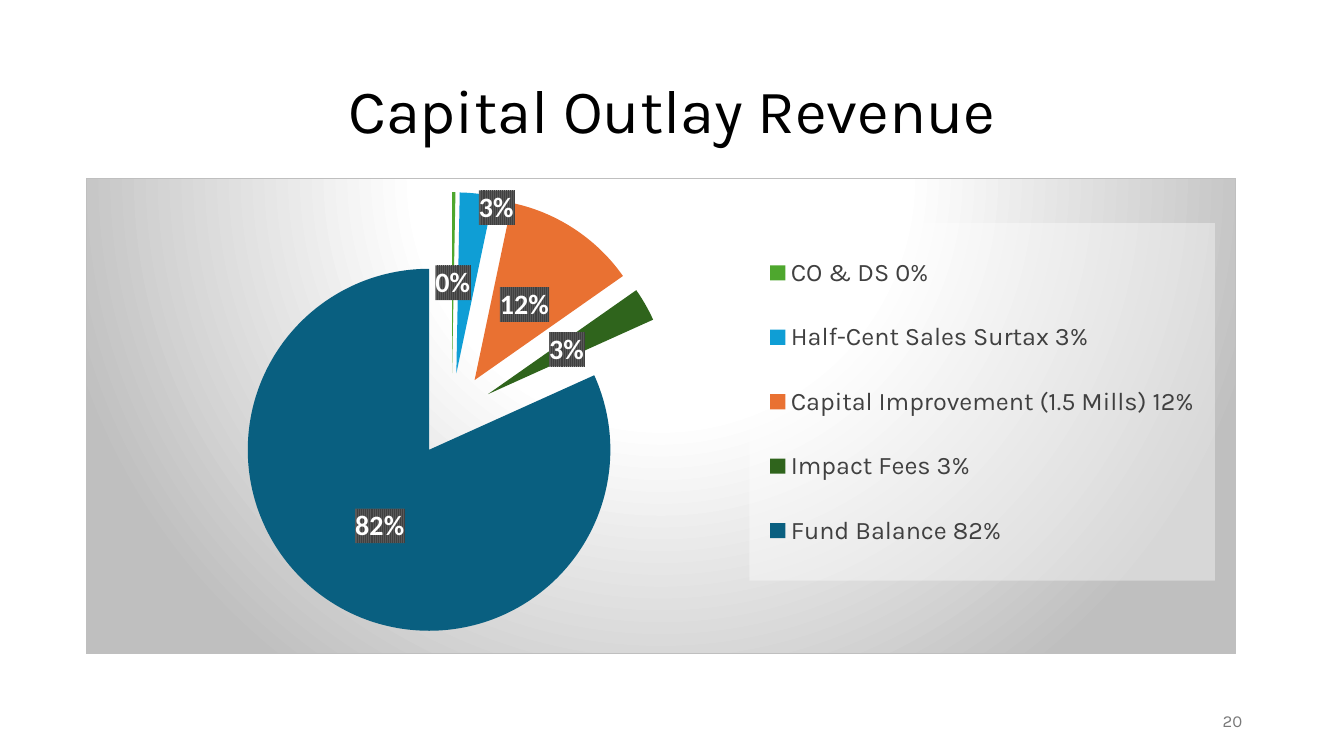
from copy import deepcopy

from pptx import Presentation
from pptx.chart.data import CategoryChartData
from pptx.dml.color import RGBColor
from pptx.enum.chart import XL_CHART_TYPE, XL_LABEL_POSITION, XL_LEGEND_POSITION
from pptx.enum.text import MSO_ANCHOR, PP_ALIGN
from pptx.oxml import parse_xml
from pptx.oxml.ns import qn
from pptx.util import Inches, Pt

BLACK = RGBColor(0x00, 0x00, 0x00)
WHITE = RGBColor(0xFF, 0xFF, 0xFF)
LEGEND_GREY = RGBColor(0x40, 0x40, 0x40)
NUMBER_GREY = RGBColor(0x79, 0x79, 0x79)
LABEL_STRIPE = RGBColor(0x59, 0x59, 0x59)
BACKDROP_GREY = RGBColor(0xBF, 0xBF, 0xBF)

REVENUE = [
    ("CO & DS 0%", 0.3, RGBColor(0x4E, 0xA7, 0x2E)),
    ("Half-Cent Sales Surtax 3%", 3, RGBColor(0x0F, 0x9E, 0xD5)),
    ("Capital Improvement (1.5 Mills) 12%", 12, RGBColor(0xE9, 0x71, 0x32)),
    ("Impact Fees 3%", 3, RGBColor(0x2F, 0x64, 0x1C)),
    ("Fund Balance 82%", 82, RGBColor(0x09, 0x5F, 0x80)),
]
EXPLOSION = 23
SURTAX_INDEX = 1
NAMESPACES = (
    'xmlns:c="http://schemas.openxmlformats.org/drawingml/2006/chart" '
    'xmlns:a="http://schemas.openxmlformats.org/drawingml/2006/main"'
)


def chart_xml(tag, content):
    return parse_xml(f"<c:{tag} {NAMESPACES}>{content}</c:{tag}>")


def manual_layout(x, y, w=None, h=None, inner=False, edge=True):
    parts = '<c:layoutTarget val="inner"/>' if inner else ""
    if edge:
        parts += '<c:xMode val="edge"/><c:yMode val="edge"/>'
    for name, value in (("x", x), ("y", y), ("w", w), ("h", h)):
        if value is not None:
            parts += f'<c:{name} val="{value}"/>'
    return chart_xml("layout", f"<c:manualLayout>{parts}</c:manualLayout>")


def replace_layout(parent, layout, position):
    for old in parent.findall(qn("c:layout")):
        parent.remove(old)
    parent.insert(position, layout)


def style_font(font, name, size, color, bold=False):
    font.name, font.size, font.bold = name, Pt(size), bold
    font.color.rgb = color


def add_text(slide, box, text, size, color, align, line_spacing=None):
    frame = slide.shapes.add_textbox(*map(Inches, box)).text_frame
    frame.word_wrap = True
    frame.vertical_anchor = MSO_ANCHOR.MIDDLE
    paragraph = frame.paragraphs[0]
    paragraph.alignment = align
    paragraph.line_spacing = line_spacing
    run = paragraph.add_run()
    run.text = text
    style_font(run.font, "Karla", size, color)


def style_backdrop(chart):
    style_font(chart.font, "Karla", 10, BLACK)
    stops = "".join(
        f'<a:gs pos="{percent * 1000}"><a:srgbClr val="{color}"/></a:gs>'
        for percent, color in ((0, WHITE), (39, WHITE), (100, BACKDROP_GREY))
    )
    backdrop = chart_xml(
        "spPr",
        f'<a:gradFill><a:gsLst>{stops}</a:gsLst><a:path path="circle">'
        '<a:fillToRect l="50000" t="-80000" r="50000" b="180000"/></a:path></a:gradFill>'
        f'<a:ln w="9525"><a:solidFill><a:srgbClr val="{BACKDROP_GREY}"/></a:solidFill></a:ln>',
    )
    chart._chartSpace.find(qn("c:txPr")).addprevious(backdrop)


def style_legend(chart):
    chart.has_legend = True
    legend = chart.legend
    legend.position = XL_LEGEND_POSITION.RIGHT
    legend.include_in_layout = False
    style_font(legend.font, "Karla", 18, LEGEND_GREY)
    replace_layout(legend._element, manual_layout(0.577, 0.093, 0.405, 0.753), 1)
    panel = chart_xml(
        "spPr",
        f'<a:solidFill><a:srgbClr val="{WHITE}"><a:alpha val="39000"/></a:srgbClr></a:solidFill>',
    )
    legend._element.find(qn("c:txPr")).addprevious(panel)


def style_labels(series):
    labels = series.data_labels
    labels.show_value = False
    labels.show_percentage = True
    labels.number_format = "0%"
    labels.number_format_is_linked = False
    labels.position = XL_LABEL_POSITION.CENTER
    style_font(labels.font, "Calibri", 20, WHITE, bold=True)
    element = labels._element
    stripes = chart_xml(
        "spPr",
        f'<a:pattFill prst="narVert"><a:fgClr><a:srgbClr val="{LEGEND_GREY}"/></a:fgClr>'
        f'<a:bgClr><a:srgbClr val="{LABEL_STRIPE}"/></a:bgClr></a:pattFill>',
    )
    element.find(qn("c:txPr")).addprevious(stripes)

    surtax = chart_xml("dLbl", f'<c:idx val="{SURTAX_INDEX}"/>')
    surtax.append(manual_layout(0.026, -0.16, edge=False))
    shared = ("numFmt", "spPr", "txPr", "dLblPos", "showLegendKey", "showVal",
              "showCatName", "showSerName", "showPercent", "showBubbleSize")
    for tag in shared:
        part = element.find(qn(f"c:{tag}"))
        if part is not None:
            surtax.append(deepcopy(part))
    element.insert(0, surtax)


def add_revenue_pie(slide, box):
    data = CategoryChartData()
    data.categories = [source for source, _, _ in REVENUE]
    data.add_series("Series 1", [share for _, share, _ in REVENUE])
    chart = slide.shapes.add_chart(XL_CHART_TYPE.PIE, *map(Inches, box), data).chart
    chart.has_title = False
    plot = chart.plots[0]
    plot.vary_by_categories = True
    series = plot.series[0]
    for index, (_, _, color) in enumerate(REVENUE):
        slice_format = series.points[index].format
        slice_format.fill.solid()
        slice_format.fill.fore_color.rgb = color
        slice_format.line.fill.background()
    explosion = chart_xml("ser", f'<c:explosion val="{EXPLOSION}"/>')[0]
    series._element.find(qn("c:dPt")).addprevious(explosion)
    for point in series._element.findall(qn("c:dPt")):
        point.find(qn("c:spPr")).addprevious(deepcopy(explosion))
    style_labels(series)
    style_legend(chart)
    style_backdrop(chart)
    plot_area = chart._chartSpace.chart.plotArea
    replace_layout(plot_area, manual_layout(0.002, 0.028, 0.632, 0.938, inner=True), 0)


def build_revenue_slide(deck):
    slide = deck.slides.add_slide(deck.slide_layouts[6])
    add_text(slide, (0.92, 0.4, 11.5, 1.45), "Capital Outlay Revenue", 44, BLACK,
             PP_ALIGN.CENTER, 0.9)
    add_revenue_pie(slide, (0.85, 1.77, 11.41, 4.72))
    add_text(slide, (9.42, 6.95, 3, 0.4), "20", 12, NUMBER_GREY, PP_ALIGN.RIGHT)


def main():
    deck = Presentation()
    deck.slide_width, deck.slide_height = Inches(13.33), Inches(7.5)
    build_revenue_slide(deck)
    deck.save("out.pptx")


if __name__ == "__main__":
    main()
